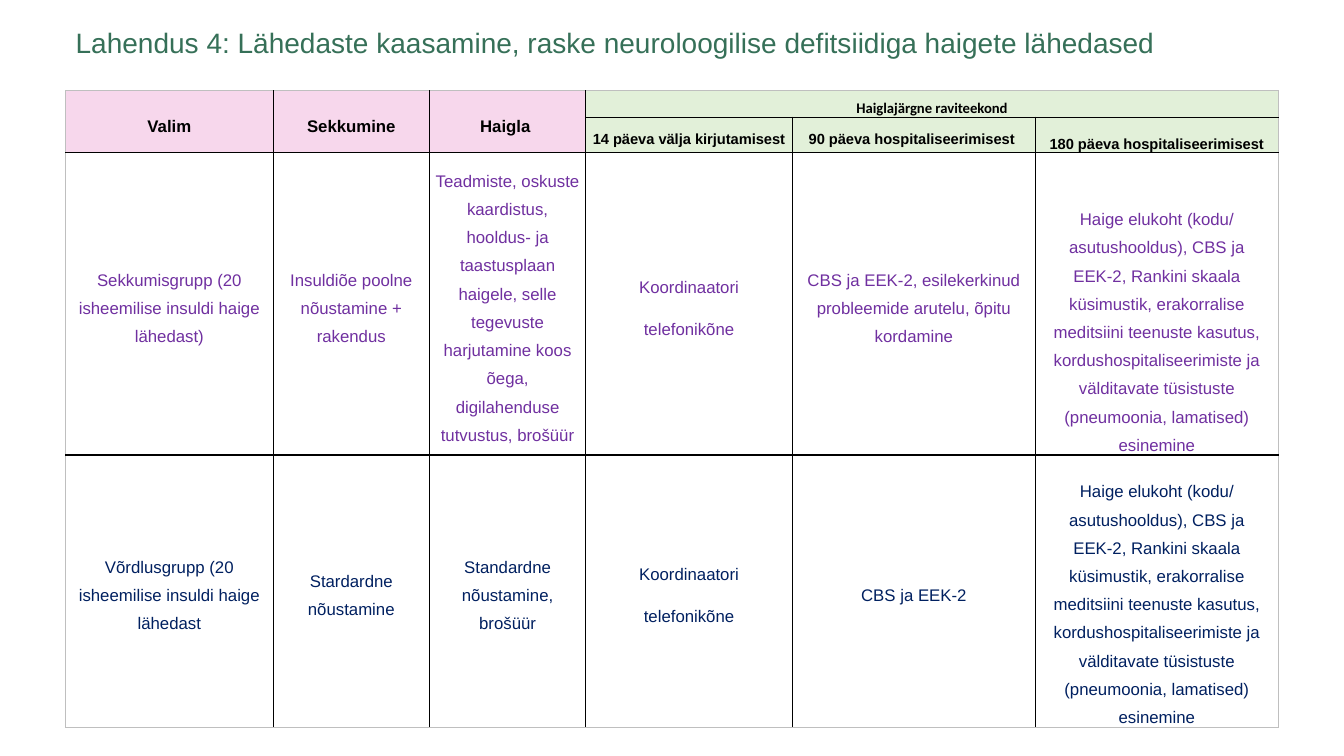
from dataclasses import dataclass

from lxml.etree import SubElement
from pptx import Presentation
from pptx.dml.color import RGBColor
from pptx.enum.text import MSO_ANCHOR as Anchor, MSO_AUTO_SIZE as AutoSize, PP_ALIGN as Align
from pptx.oxml.ns import qn
from pptx.table import Table, _Cell as Cell
from pptx.text.text import TextFrame
from pptx.util import Inches, Pt

COLORS = {
    "title": "367058",
    "heading": "000000",
    "intervention": "7030A0",
    "control": "002060",
    "pink": "F7D7EC",
    "green": "E2F0D9",
    "grid": "000000",
    "frame": "BFBFBF",
}
COLUMN_WIDTHS = [2.06, 1.55, 1.55, 2.05, 2.41, 2.41]
ROW_HEIGHTS = [0.26, 0.35, 3.0, 2.7]
CALL = "Koordinaatori\ntelefonikõne"
OUTCOME = (
    "Haige elukoht (kodu/ asutushooldus), CBS ja EEK-2, Rankini skaala küsimustik, "
    "erakorralise meditsiini teenuste kasutus, kordushospitaliseerimiste ja "
    "välditavate tüsistuste (pneumoonia, lamatised) esinemine"
)


@dataclass(frozen=True)
class Heading:
    text: str
    row: int
    column: int
    fill: str = "green"
    size: float = 10.5
    font: str = "Arial"
    anchor: Anchor = Anchor.MIDDLE
    rows: int = 1
    columns: int = 1


@dataclass(frozen=True)
class Group:
    color: str
    texts: tuple[str, ...]


HEADINGS = [
    *(
        Heading(text, 0, column, fill="pink", size=12, rows=2)
        for column, text in enumerate(["Valim", "Sekkumine", "Haigla "])
    ),
    Heading("Haiglajärgne raviteekond", 0, 3, font="Calibri", anchor=Anchor.TOP, columns=3),
    Heading("14 päeva välja kirjutamisest", 1, 3),
    Heading("90 päeva hospitaliseerimisest ", 1, 4),
    Heading("180 päeva hospitaliseerimisest", 1, 5, anchor=Anchor.BOTTOM),
]
GROUPS = [
    Group("intervention", (
        "Sekkumisgrupp (20 isheemilise insuldi haige lähedast)",
        "Insuldiõe poolne nõustamine + rakendus",
        "Teadmiste, oskuste kaardistus, hooldus- ja taastusplaan haigele, selle tegevuste "
        "harjutamine koos õega, digilahenduse tutvustus, brošüür",
        CALL,
        "CBS ja EEK-2, esilekerkinud probleemide arutelu, õpitu kordamine",
        OUTCOME,
    )),
    Group("control", (
        "Võrdlusgrupp (20 isheemilise insuldi haige lähedast",
        "Stardardne nõustamine",
        "Standardne nõustamine, brošüür",
        CALL,
        "CBS ja EEK-2",
        OUTCOME,
    )),
]


def write(frame: TextFrame, text: str, *, size: float, color: str, font: str = "Arial",
          bold: bool = False, align: Align = Align.CENTER,
          spacing: float = 1.5, after: float = 10) -> None:
    frame.text = text
    for paragraph in frame.paragraphs:
        paragraph.alignment = align
        paragraph.line_spacing = spacing
        paragraph.space_after = Pt(after)
        for run in paragraph.runs:
            run.font.name = font
            run.font.size = Pt(size)
            run.font.bold = bold
            run.font.color.rgb = RGBColor.from_string(COLORS[color])


def set_layout(cell: Cell, anchor: Anchor) -> None:
    cell.vertical_anchor = anchor
    cell.margin_left = cell.margin_right = Inches(0.05)
    cell.margin_top = cell.margin_bottom = 0


def draw_borders(cell: Cell, row: int, column: int) -> None:
    outer_edges = {
        "L": column == 0,
        "R": column + cell.span_width == len(COLUMN_WIDTHS),
        "T": row == 0,
        "B": row + cell.span_height == len(ROW_HEIGHTS),
    }
    properties = cell._tc.get_or_add_tcPr()
    for side, outer in outer_edges.items():
        width = Pt(0.5 if outer else 1)
        border = SubElement(properties, qn(f"a:ln{side}"), w=str(width))
        fill = SubElement(border, qn("a:solidFill"))
        SubElement(fill, qn("a:srgbClr"), val=COLORS["frame" if outer else "grid"])


def fill_headings(table: Table) -> None:
    for heading in HEADINGS:
        cell = table.cell(heading.row, heading.column)
        set_layout(cell, heading.anchor)
        write(cell.text_frame, heading.text, size=heading.size, color="heading",
              font=heading.font, bold=True)


def fill_groups(table: Table) -> None:
    for row, group in enumerate(GROUPS, start=2):
        for column, text in enumerate(group.texts):
            cell = table.cell(row, column)
            set_layout(cell, Anchor.BOTTOM if text == OUTCOME else Anchor.MIDDLE)
            write(cell.text_frame, text, size=12, color=group.color)


def style_cells(table: Table) -> None:
    for heading in HEADINGS:
        if heading.rows > 1 or heading.columns > 1:
            last = table.cell(heading.row + heading.rows - 1,
                              heading.column + heading.columns - 1)
            table.cell(heading.row, heading.column).merge(last)
    for row in range(len(ROW_HEIGHTS)):
        for column in range(len(COLUMN_WIDTHS)):
            cell = table.cell(row, column)
            draw_borders(cell, row, column)
            cell.fill.background()
    for heading in HEADINGS:
        fill = table.cell(heading.row, heading.column).fill
        fill.solid()
        fill.fore_color.rgb = RGBColor.from_string(COLORS[heading.fill])


def main() -> None:
    deck = Presentation()
    deck.slide_width, deck.slide_height = Inches(13.33), Inches(7.5)
    slide = deck.slides.add_slide(deck.slide_layouts[5])

    title = slide.shapes.title
    title.left, title.top = Inches(0.65), Inches(0.2)
    title.width, title.height = Inches(10.99), Inches(0.44)
    title.text_frame.word_wrap = False
    title.text_frame.auto_size = AutoSize.SHAPE_TO_FIT_TEXT
    title.text_frame.vertical_anchor = Anchor.TOP
    write(title.text_frame,
          "Lahendus 4: Lähedaste kaasamine, raske neuroloogilise defitsiidiga haigete lähedased",
          size=20, color="title", align=Align.LEFT, spacing=1.0, after=0)

    pathway = slide.shapes.add_table(
        len(ROW_HEIGHTS), len(COLUMN_WIDTHS), Inches(0.65), Inches(0.9),
        Inches(sum(COLUMN_WIDTHS)), Inches(sum(ROW_HEIGHTS))).table
    pathway.first_row = pathway.horz_banding = False
    for column, width in zip(pathway.columns, COLUMN_WIDTHS):
        column.width = Inches(width)
    for row, height in zip(pathway.rows, ROW_HEIGHTS):
        row.height = Inches(height)
    style_cells(pathway)
    fill_headings(pathway)
    fill_groups(pathway)

    deck.save("out.pptx")


if __name__ == "__main__":
    main()
